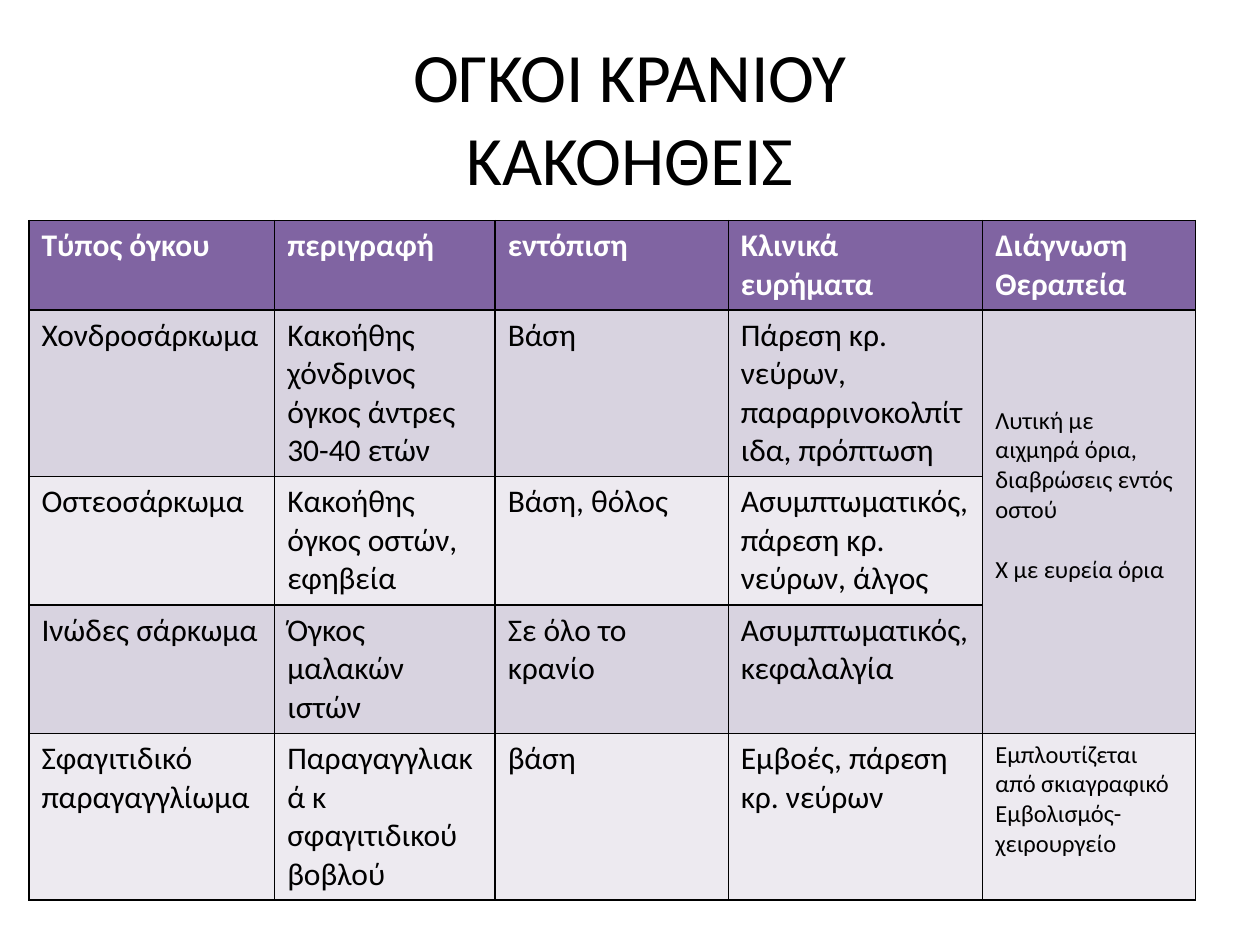
from lxml.etree import SubElement
from pptx import Presentation
from pptx.dml.color import RGBColor
from pptx.enum.text import MSO_ANCHOR, MSO_AUTO_SIZE, PP_ALIGN
from pptx.oxml.ns import qn
from pptx.util import Inches, Pt

BLACK, WHITE = "000000", "FFFFFF"
HEADER_FILL, DARK_BAND, LIGHT_BAND = "8064A2", "D8D3E0", "EDEAF0"


def add_text(paragraph, text, size, color=BLACK, bold=False):
    run = paragraph.add_run()
    run.text = text
    run.font.name = "Calibri"
    run.font.size = Pt(size)
    run.font.bold = bold
    run.font.color.rgb = RGBColor.from_string(color)


def add_borders(cell):
    properties = cell._tc.get_or_add_tcPr()
    for side in ("lnL", "lnR", "lnT", "lnB"):
        line = SubElement(properties, qn(f"a:{side}"), w=str(Pt(1)))
        fill = SubElement(line, qn("a:solidFill"))
        SubElement(fill, qn("a:srgbClr"), val=BLACK)


presentation = Presentation()
presentation.slide_width = Inches(10)
presentation.slide_height = Inches(7.5)
slide = presentation.slides.add_slide(presentation.slide_layouts[5])

title = slide.shapes.title
title.left, title.top = Inches(0.5), Inches(0.3)
title.width, title.height = Inches(9), Inches(1.25)
title.text_frame.auto_size = MSO_AUTO_SIZE.NONE
title.text_frame.vertical_anchor = MSO_ANCHOR.MIDDLE
heading = title.text_frame.paragraphs[0]
heading.alignment = PP_ALIGN.CENTER
add_text(heading, "ΟΓΚΟΙ ΚΡΑΝΙΟΥ", 39.6)
heading.add_line_break()
add_text(heading, "ΚΑΚΟΗΘΕΙΣ", 39.6)

# Each cell is a list of paragraphs; the empty ones belong to the merged cell.
rows = [
    [["Τύπος όγκου"], ["περιγραφή"], ["εντόπιση"], ["Κλινικά ευρήματα"],
     ["Διάγνωση", "Θεραπεία"]],
    [["Χονδροσάρκωμα"], ["Κακοήθης χόνδρινος όγκος άντρες 30-40 ετών"], ["Βάση"],
     ["Πάρεση κρ. νεύρων, παραρρινοκολπίτιδα, πρόπτωση"],
     ["Λυτική με αιχμηρά όρια, διαβρώσεις εντός οστού", "Χ με ευρεία όρια"]],
    [["Οστεοσάρκωμα"], ["Κακοήθης όγκος οστών, εφηβεία"], ["Βάση, θόλος"],
     ["Ασυμπτωματικός, πάρεση κρ. νεύρων, άλγος"], []],
    [["Ινώδες σάρκωμα"], ["Όγκος μαλακών ιστών"], ["Σε όλο το κρανίο"],
     ["Ασυμπτωματικός, κεφαλαλγία"], []],
    [["Σφαγιτιδικό παραγαγγλίωμα"], ["Παραγαγγλιακά κ σφαγιτιδικού βοβλού"],
     ["βάση"], ["Εμβοές, πάρεση κρ. νεύρων"],
     ["Εμπλουτίζεται από σκιαγραφικό", "Εμβολισμός-χειρουργείο"]],
]
column_widths = [1.95, 1.75, 1.85, 2.02, 1.69]
row_heights = [0.71, 1.32, 1.02, 1.02, 1.32]

table = slide.shapes.add_table(
    len(rows), len(column_widths), Inches(0.23), Inches(1.75),
    Inches(sum(column_widths)), Inches(sum(row_heights))).table
table.horz_banding = False
for column, width in zip(table.columns, column_widths):
    column.width = Inches(width)
for row, height in zip(table.rows, row_heights):
    row.height = Inches(height)

for row_index, row in enumerate(rows):
    is_header = row_index == 0
    band = DARK_BAND if row_index % 2 else LIGHT_BAND
    for column_index, texts in enumerate(row):
        cell = table.cell(row_index, column_index)
        add_borders(cell)
        cell.fill.solid()
        cell.fill.fore_color.rgb = RGBColor.from_string(HEADER_FILL if is_header else band)
        size = 14 if column_index == 4 and not is_header else 18
        for index, text in enumerate(texts):
            frame = cell.text_frame
            paragraph = frame.add_paragraph() if index else frame.paragraphs[0]
            add_text(paragraph, text, size, WHITE if is_header else BLACK, is_header)

diagnosis = table.cell(1, 4)
diagnosis.merge(table.cell(3, 4))
diagnosis.margin_top = Inches(0.76)
diagnosis.text_frame.paragraphs[1].space_before = Pt(17)

presentation.save("out.pptx")
